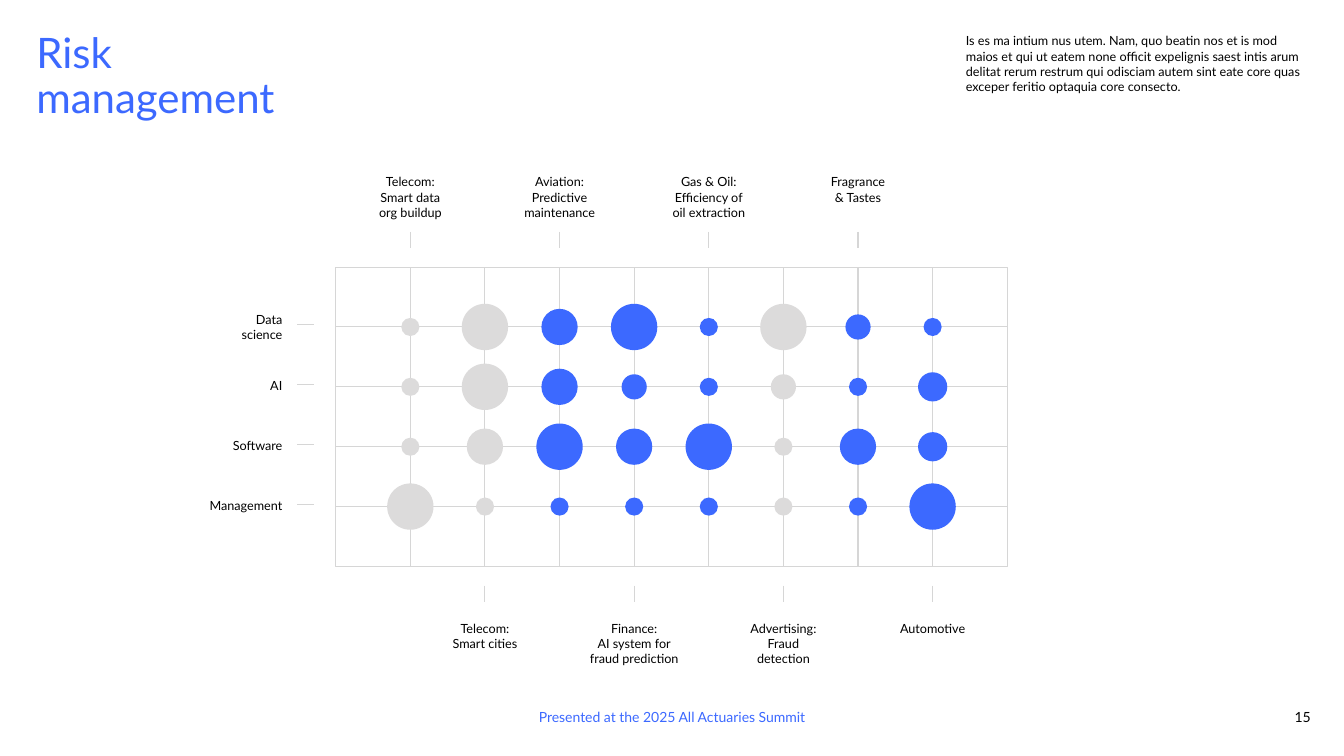
"""Builds the risk management slide: a bubble matrix of industries against capabilities."""
from dataclasses import dataclass

from lxml.etree import SubElement
from pptx import Presentation
from pptx.dml.color import RGBColor
from pptx.enum.shapes import MSO_CONNECTOR, MSO_SHAPE
from pptx.enum.text import MSO_ANCHOR, PP_ALIGN
from pptx.oxml.ns import qn
from pptx.util import Inches, Pt

TITLE = "Risk\vmanagement"
INTRO = (
    "Is es ma intium nus utem. Nam, quo beatin nos et is mod maios et qui ut eatem "
    "none officit expelignis saest intis arum delitat rerum restrum qui odisciam autem "
    "sint eate core quas exceper feritio optaquia core consecto."
)
FOOTER = "Presented at the 2025 All Actuaries Summit"
PAGE_NUMBER = "15"
INDUSTRIES = [
    "Telecom:\nSmart data\norg buildup",
    "Telecom:\nSmart cities",
    "Aviation:\nPredictive\nmaintenance",
    "Finance:\nAI system for\nfraud prediction",
    "Gas & Oil:\nEfficiency of\noil extraction",
    "Advertising:\nFraud\ndetection",
    "Fragrance\n& Tastes",
    "Automotive",
]
MUTED_COLUMNS = {1, 2, 6}
CAPABILITIES = {
    "Data\nscience": [1, 5, 4, 5, 1, 5, 2, 1],
    "AI": [1, 5, 4, 2, 1, 2, 1, 3],
    "Software": [1, 4, 5, 4, 5, 1, 4, 3],
    "Management": [5, 1, 1, 1, 1, 1, 1, 5],
}
DIAMETERS = {1: 0.18, 2: 0.25, 3: 0.29, 4: 0.36, 5: 0.46}


@dataclass(frozen=True)
class Theme:
    """Colours, font and type sizes."""
    blue: str = "3C69FF"
    muted: str = "DCDBDB"
    rule: str = "D6D6D6"
    ink: str = "000000"
    font: str = "Lato"
    title: int = 30
    body: int = 9
    footer: int = 10
    rule_width: float = 0.75


THEME = Theme()
WIDTH, HEIGHT = 13.33, 7.5
LEFT, TOP = 3.33, 2.65
COLUMN, ROW = 0.74, 0.594
RIGHT = LEFT + COLUMN * (len(INDUSTRIES) + 1)
BOTTOM = TOP + ROW * (len(CAPABILITIES) + 1)
TICK = 0.16
TICK_GAP = 0.19
LABEL_WIDTH, LABEL_HEIGHT, ROW_LABEL_HEIGHT = 1.53, 0.56, 0.28
MARGIN_LEFT, MARGIN_RIGHT = 0.36, 0.33
FOOTER_TOP, FOOTER_HEIGHT = 7.0, 0.2


def add_text(page, text, left, top, width, height, *, size=THEME.body, color=THEME.ink,
             align=PP_ALIGN.LEFT, anchor=MSO_ANCHOR.TOP, spacing=None):
    box = page.shapes.add_textbox(Inches(left), Inches(top), Inches(width), Inches(height))
    frame = box.text_frame
    frame.word_wrap = True
    frame.vertical_anchor = anchor
    frame.margin_left = frame.margin_right = frame.margin_top = frame.margin_bottom = 0
    for index, line in enumerate(text.split("\n")):
        para = frame.paragraphs[0] if index == 0 else frame.add_paragraph()
        para.text = line
        para.alignment = align
        para.line_spacing = spacing
        for span in para.runs:
            span.font.name = THEME.font
            span.font.size = Pt(size)
            span.font.color.rgb = RGBColor.from_string(color)


def add_rule(page, x1, y1, x2, y2):
    rule = page.shapes.add_connector(
        MSO_CONNECTOR.STRAIGHT, Inches(x1), Inches(y1), Inches(x2), Inches(y2))
    rule.line.color.rgb = RGBColor.from_string(THEME.rule)
    rule.line.width = Pt(THEME.rule_width)
    SubElement(rule.line._get_or_add_ln().getparent(), qn("a:effectLst"))


def add_bubble(page, x, y, diameter, color):
    bubble = page.shapes.add_shape(
        MSO_SHAPE.OVAL, Inches(x - diameter / 2), Inches(y - diameter / 2),
        Inches(diameter), Inches(diameter))
    bubble.shadow.inherit = False
    bubble.fill.solid()
    bubble.fill.fore_color.rgb = RGBColor.from_string(color)
    bubble.line.fill.background()


def add_frame(page):
    frame = page.shapes.add_shape(
        MSO_SHAPE.RECTANGLE, Inches(LEFT), Inches(TOP),
        Inches(RIGHT - LEFT), Inches(BOTTOM - TOP))
    frame.shadow.inherit = False
    frame.fill.background()
    frame.line.color.rgb = RGBColor.from_string(THEME.rule)
    frame.line.width = Pt(THEME.rule_width)


def add_matrix(page):
    add_frame(page)
    for number, label in enumerate(CAPABILITIES, 1):
        y = TOP + number * ROW
        tick_end = LEFT - 0.22
        add_rule(page, LEFT, y, RIGHT, y)
        add_rule(page, tick_end - TICK, y - 0.02, tick_end, y - 0.02)
        label_top = y - 0.09 - 0.06 * label.count("\n")
        add_text(page, label, LEFT - 0.53 - LABEL_WIDTH, label_top, LABEL_WIDTH,
                 ROW_LABEL_HEIGHT, align=PP_ALIGN.RIGHT)
    for number, label in enumerate(INDUSTRIES, 1):
        x = LEFT + number * COLUMN
        above = number % 2 == 1
        tick_top = TOP - TICK_GAP - TICK if above else BOTTOM + TICK_GAP
        label_top = tick_top - 0.57 if above else tick_top + 0.35
        add_rule(page, x, TOP, x, BOTTOM)
        add_rule(page, x, tick_top, x, tick_top + TICK)
        add_text(page, label, x - LABEL_WIDTH / 2, label_top, LABEL_WIDTH, LABEL_HEIGHT,
                 align=PP_ALIGN.CENTER)
    for row, levels in enumerate(CAPABILITIES.values(), 1):
        for column, level in enumerate(levels, 1):
            color = THEME.muted if column in MUTED_COLUMNS else THEME.blue
            add_bubble(page, LEFT + column * COLUMN, TOP + row * ROW,
                       DIAMETERS[level], color)


def main():
    deck = Presentation()
    deck.slide_width, deck.slide_height = Inches(WIDTH), Inches(HEIGHT)
    page = deck.slides.add_slide(deck.slide_layouts[6])
    add_text(page, TITLE, MARGIN_LEFT, 0.32, 5.91, 1.35,
             size=THEME.title, color=THEME.blue, spacing=0.9)
    add_text(page, INTRO, WIDTH - MARGIN_RIGHT - 3.42, 0.33, 3.42, 1.32)
    add_matrix(page)
    add_text(page, FOOTER, (WIDTH - 4.5) / 2, FOOTER_TOP, 4.5, FOOTER_HEIGHT,
             size=THEME.footer, color=THEME.blue, align=PP_ALIGN.CENTER,
             anchor=MSO_ANCHOR.BOTTOM)
    add_text(page, PAGE_NUMBER, WIDTH - MARGIN_RIGHT - 0.46, FOOTER_TOP, 0.46, FOOTER_HEIGHT,
             size=THEME.footer, align=PP_ALIGN.RIGHT, anchor=MSO_ANCHOR.BOTTOM)
    deck.save("out.pptx")


if __name__ == "__main__":
    main()
